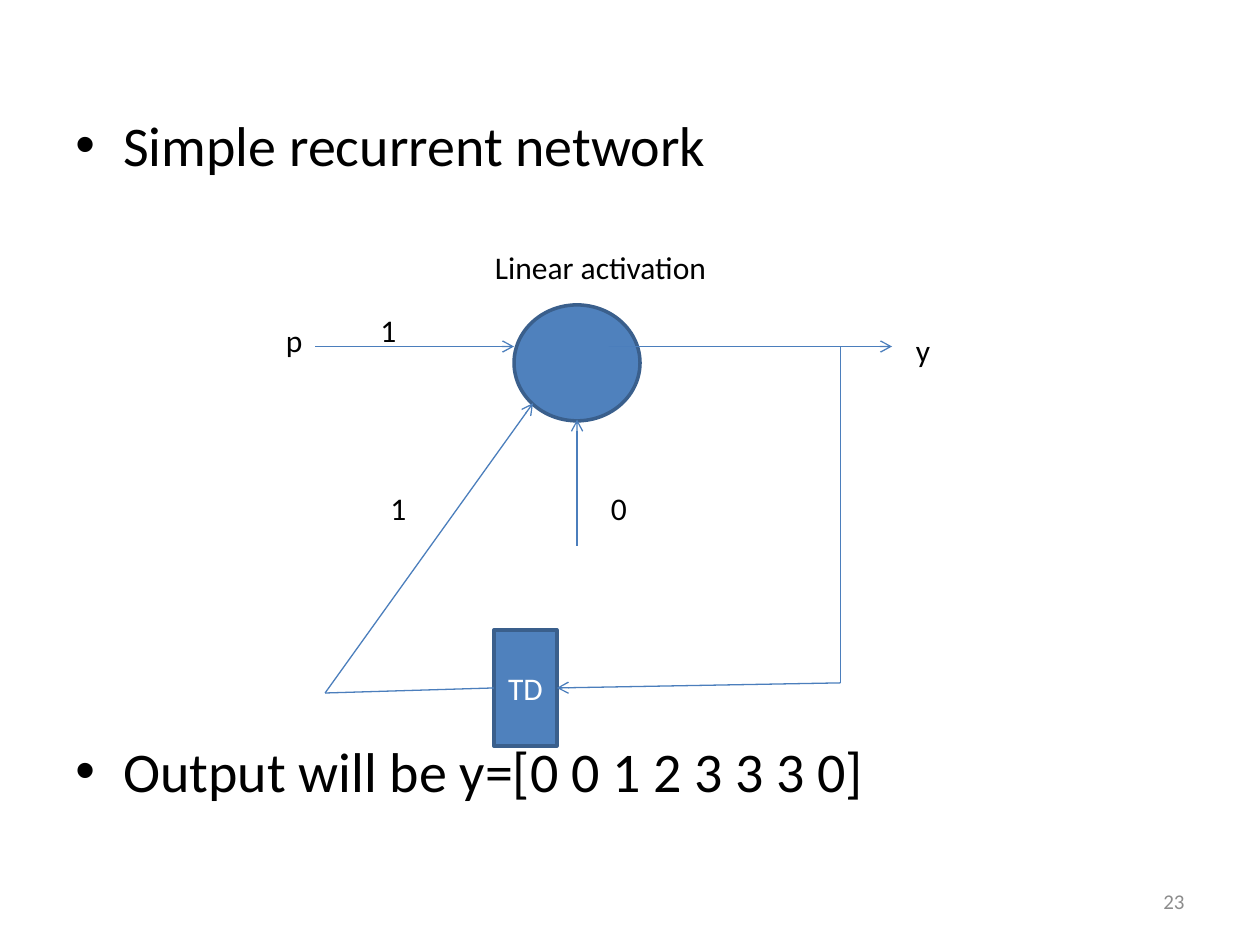
from pptx import Presentation
from pptx.dml.color import RGBColor
from pptx.enum.shapes import MSO_CONNECTOR, MSO_SHAPE
from pptx.enum.text import MSO_ANCHOR, PP_ALIGN
from pptx.oxml.ns import qn
from pptx.util import Inches, Pt
from lxml.etree import SubElement

BLACK = RGBColor(0x00, 0x00, 0x00)
WHITE = RGBColor(0xFF, 0xFF, 0xFF)
GRAY = RGBColor(0x8C, 0x8C, 0x8C)
BLUE = RGBColor(0x4F, 0x81, 0xBD)
EDGE = RGBColor(0x3A, 0x5F, 0x8C)
WIRE = RGBColor(0x4B, 0x7E, 0xBC)


class Sketch:
    """Holds the style and the current slide."""

    font = "Calibri"

    def __init__(self, slide):
        self.slide = slide
        self.shapes = slide.shapes

    def style(self, para, size, color):
        for run in para.runs:
            run.font.name = self.font
            run.font.size = Pt(size)
            run.font.color.rgb = color

    def box(self, left, top, width, height):
        item = self.shapes.add_textbox(
            Inches(left), Inches(top), Inches(width), Inches(height))
        item.text_frame.word_wrap = True
        return item.text_frame

    def label(self, text, left, top, width, size=18, color=BLACK,
              align=PP_ALIGN.LEFT, anchor=MSO_ANCHOR.TOP):
        frame = self.box(left, top, width, 0.4)
        frame.text = text
        frame.vertical_anchor = anchor
        para = frame.paragraphs[0]
        para.alignment = align
        self.style(para, size, color)

    def bullets(self, items, left, top, width, height, gap):
        """Add bulleted items with a gap in points between them."""
        frame = self.box(left, top, width, height)
        frame.text = "\n".join(items)
        for index, para in enumerate(frame.paragraphs):
            para.space_before = Pt(gap if index else 0)
            props = para._p.get_or_add_pPr()
            props.set("marL", str(Inches(0.38)))
            props.set("indent", str(Inches(-0.38)))
            SubElement(props, qn("a:buFont"), typeface="Arial")
            SubElement(props, qn("a:buChar"), char="•")
            self.style(para, 32, BLACK)

    def node(self, kind, left, top, width, height, text=""):
        item = self.shapes.add_shape(
            kind, Inches(left), Inches(top), Inches(width), Inches(height))
        item.shadow.inherit = False
        item.fill.solid()
        item.fill.fore_color.rgb = BLUE
        item.line.color.rgb = EDGE
        item.line.width = Pt(2)
        frame = item.text_frame
        frame.text = text
        frame.vertical_anchor = MSO_ANCHOR.MIDDLE
        frame.paragraphs[0].alignment = PP_ALIGN.CENTER
        self.style(frame.paragraphs[0], 18, WHITE)

    def wire(self, start, end, arrow=True):
        item = self.shapes.add_connector(
            MSO_CONNECTOR.STRAIGHT, *map(Inches, start + end))
        item.line.color.rgb = WIRE
        item.line.width = Pt(0.75)
        if arrow:
            SubElement(item.line._get_or_add_ln(), qn("a:tailEnd"), type="arrow")
        SubElement(item._element.spPr, qn("a:effectLst"))


def main():
    deck = Presentation()
    deck.slide_width, deck.slide_height = Inches(10), Inches(7.5)
    net = Sketch(deck.slides.add_slide(deck.slide_layouts[6]))

    net.bullets(["Simple recurrent network",
                 "Output will be y=[0 0 1 2 3 3 3 0]"],
                0.5, 0.83, 9, 5.87, gap=319)

    net.node(MSO_SHAPE.OVAL, 4.08, 2.42, 1, 0.92)
    net.wire((4.58, 4.33), (4.58, 3.33))
    net.wire((2.5, 2.75), (4.08, 2.75))
    net.wire((4.83, 2.75), (7.08, 2.75))

    # Feedback loop through the time delay
    corner, turn = (6.67, 5.42), (2.58, 5.5)
    net.wire((6.67, 2.75), corner, arrow=False)
    net.node(MSO_SHAPE.RECTANGLE, 3.92, 5, 0.5, 0.92, "TD")
    net.wire(corner, (4.42, 5.46))
    net.wire((3.92, 5.46), turn, arrow=False)
    net.wire(turn, (4.23, 3.2))

    for text, left, top, width in (
            ("1", 2.92, 2.42, 0.58),
            ("0", 4.75, 3.83, 0.33),
            ("y", 7.17, 2.58, 0.35),
            ("p", 2.17, 2.5, 0.35),
            ("Linear activation", 3.83, 1.92, 1.92),
            ("1", 3, 3.83, 0.33)):
        net.label(text, left, top, width)

    net.label("23", 7.17, 6.95, 2.33, 12, GRAY,
              PP_ALIGN.RIGHT, MSO_ANCHOR.MIDDLE)
    deck.save("out.pptx")


if __name__ == "__main__":
    main()
